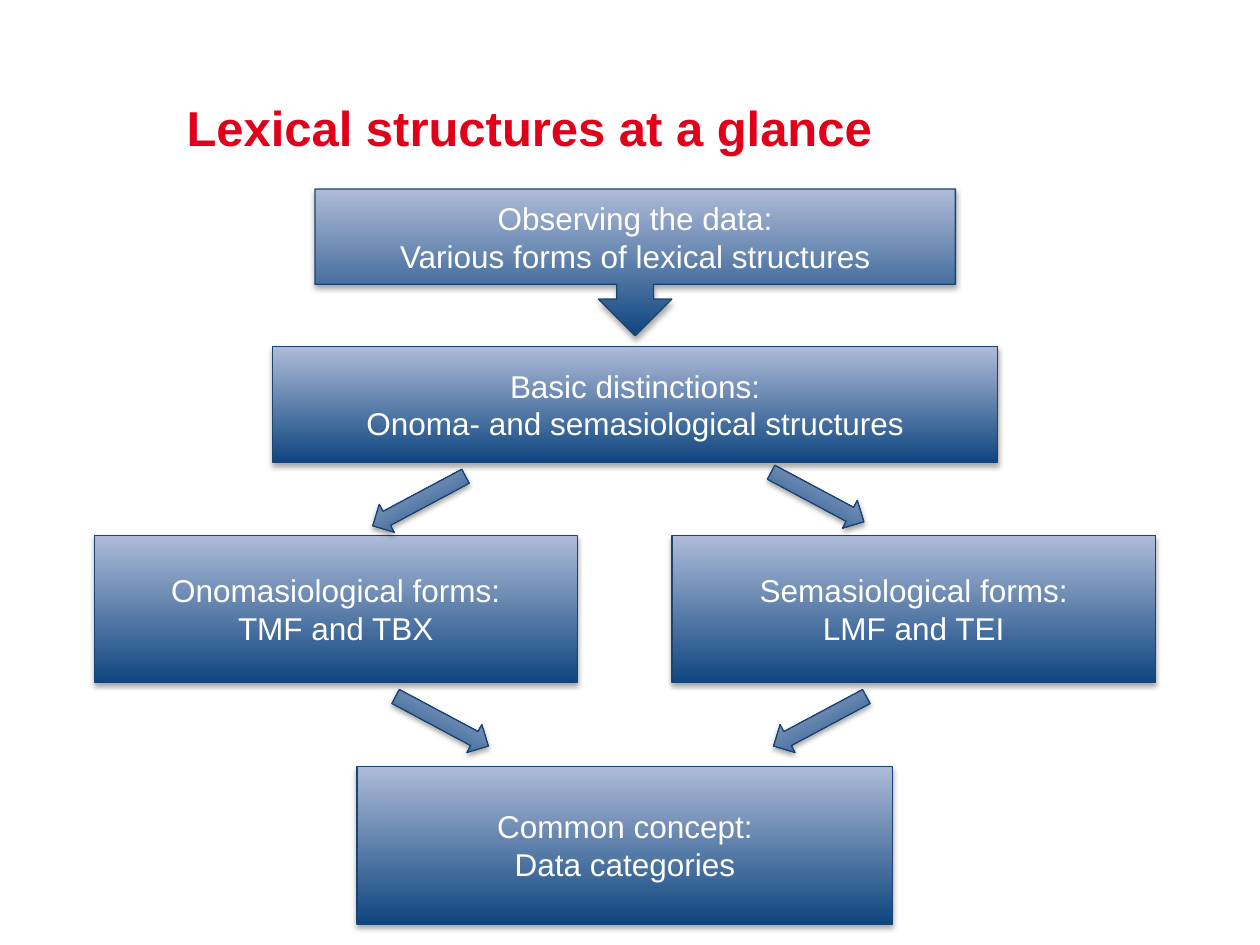
from lxml import etree
from pptx import Presentation
from pptx.dml.color import RGBColor
from pptx.enum.shapes import MSO_SHAPE
from pptx.enum.text import MSO_ANCHOR, MSO_AUTO_SIZE, PP_ALIGN
from pptx.oxml.ns import qn
from pptx.util import Cm, Pt

RECT = MSO_SHAPE.RECTANGLE
CALLOUT = MSO_SHAPE.DOWN_ARROW_CALLOUT
LEFT, RIGHT = MSO_SHAPE.LEFT_ARROW, MSO_SHAPE.RIGHT_ARROW
MIDDLE = MSO_ANCHOR.MIDDLE
FONT = "Arial"
TILT = 28.1
COLORS = {"title": "E1001A", "dark": "0F467F", "light": "AEBBD8",
          "edge": "194472", "text": "FFFFFF", "shade": "000000"}

# Kind, left, top, width, height in cm within the chart, and lines of text
BOXES = [
    (CALLOUT, 4.45, 0, 12.91, 2.96,
     ["Observing the data:", "Various forms of lexical structures"]),
    (RECT, 3.6, 3.18, 14.61, 2.33,
     ["Basic distinctions:", "Onoma- and semasiological structures"]),
    (RECT, 0, 6.99, 9.74, 2.96,
     ["Onomasiological forms:", "TMF and TBX"]),
    (RECT, 11.65, 6.99, 9.74, 2.96,
     ["Semasiological forms:", "LMF and TEI"]),
    (RECT, 5.3, 11.64, 10.8, 3.18,
     ["Common concept:", "Data categories"]),
]
# Kind, left, top in cm within the chart
ARROWS = [(LEFT, 5.49, 5.97), (RIGHT, 13.52, 5.89),
          (RIGHT, 5.95, 10.41), (LEFT, 13.57, 10.41)]


def color(name):
    return RGBColor.from_string(COLORS[name])


def set_font(para, size, name, bold=False):
    font = para.font
    font.name, font.size, font.bold = FONT, Pt(size), bold
    font.color.rgb = color(name)


def add_shade(shape):
    shape.shadow.inherit = False
    effects = shape._element.spPr.find(qn("a:effectLst"))
    outer = etree.SubElement(effects, qn("a:outerShdw"), blurRad="40000",
                             dist="23000", dir="5400000", rotWithShape="0")
    tone = etree.SubElement(outer, qn("a:srgbClr"), val=COLORS["shade"])
    etree.SubElement(tone, qn("a:alpha"), val="35000")


def add_block(slide, kind, left, top, width, height):
    shape = slide.shapes.add_shape(kind, Cm(left), Cm(top),
                                   Cm(width), Cm(height))
    shape.fill.gradient()
    shape.fill.gradient_angle = 90
    for stop, name in zip(shape.fill.gradient_stops, ("dark", "light")):
        stop.color.rgb = color(name)
    shape.line.color.rgb = color("edge")
    shape.line.width = Pt(0.75)
    add_shade(shape)
    return shape


def add_title(slide, left, top, width, height):
    title = slide.shapes.title
    title.left, title.top = Cm(left), Cm(top)
    title.width, title.height = Cm(width), Cm(height)
    frame = title.text_frame
    frame.text = "Lexical structures at a glance"
    frame.margin_left = frame.margin_right = 0
    frame.margin_top = frame.margin_bottom = 0
    frame.auto_size = MSO_AUTO_SIZE.NONE
    frame.vertical_anchor = MIDDLE
    para = frame.paragraphs[0]
    para.alignment = PP_ALIGN.LEFT
    set_font(para, 28, "title", True)


def add_flow(slide, left, top):
    # Labelled boxes
    for kind, x, y, width, height, lines in BOXES:
        box = add_block(slide, kind, left + x, top + y, width, height)
        frame = box.text_frame
        frame.word_wrap = True
        frame.vertical_anchor = MIDDLE
        frame.text = "\n".join(lines)
        for para in frame.paragraphs:
            para.alignment = PP_ALIGN.CENTER
            set_font(para, 18, "text")

    # Tilted arrows between the boxes
    for kind, x, y in ARROWS:
        arrow = add_block(slide, kind, left + x, top + y, 2.12, 0.64)
        arrow.rotation = TILT if kind == RIGHT else -TILT


def main():
    deck = Presentation()
    deck.slide_width, deck.slide_height = Cm(25.4), Cm(19.05)
    slide = deck.slides.add_slide(deck.slide_layouts[5])
    add_title(slide, 3.76, 0.97, 20.96, 3.18)
    add_flow(slide, 1.9, 3.81)
    deck.save("out.pptx")


if __name__ == "__main__":
    main()
